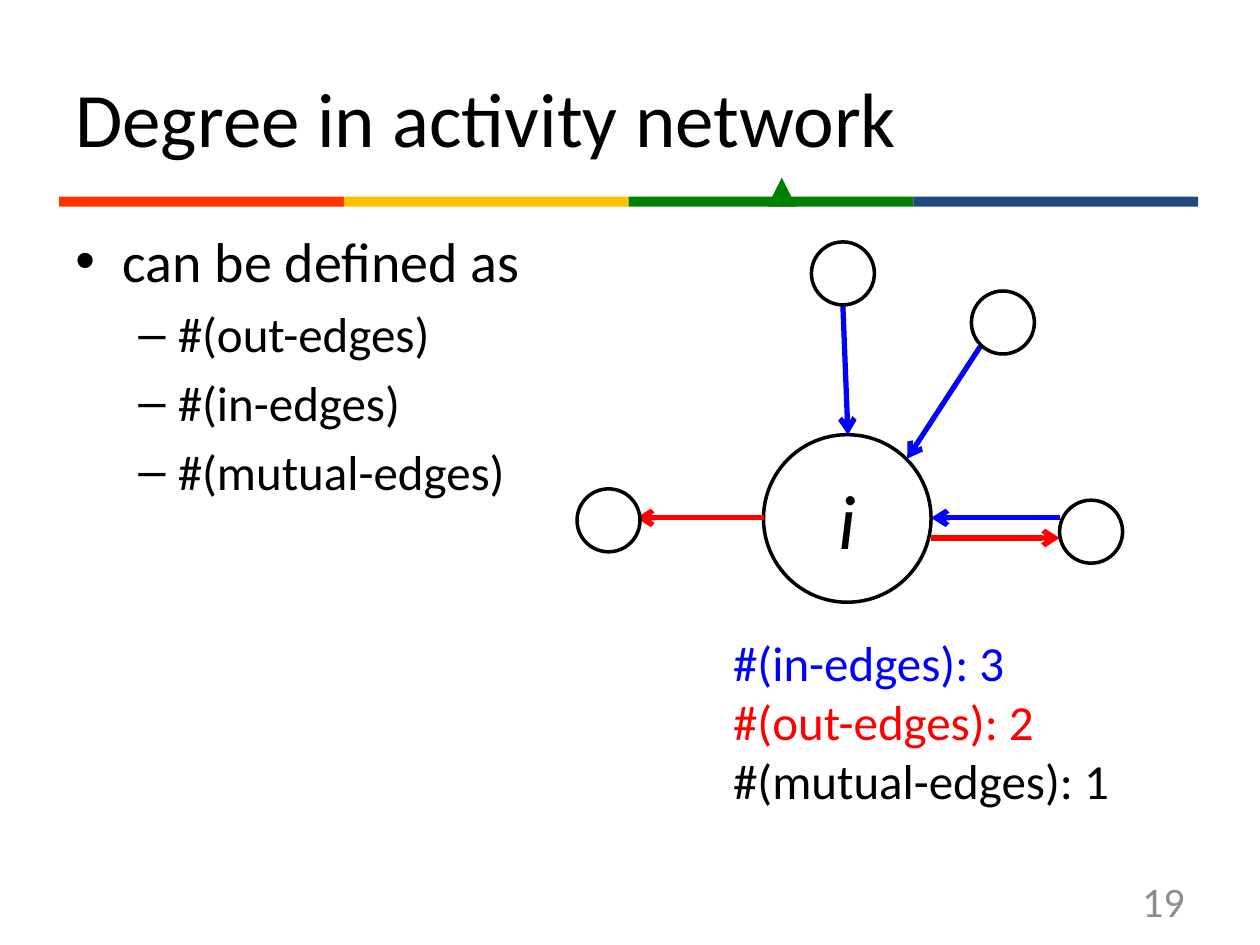
from pptx import Presentation
from pptx.dml.color import RGBColor
from pptx.enum.shapes import MSO_CONNECTOR, MSO_SHAPE as SHAPE
from pptx.enum.text import MSO_ANCHOR as ANCHOR, PP_ALIGN as ALIGN
from pptx.oxml.xmlchemy import OxmlElement
from pptx.util import Inches, Pt

prs = Presentation()
prs.slide_width, prs.slide_height = Inches(10), Inches(7.5)
s = prs.slides.add_slide(prs.slide_layouts[6])
COL = prs.slide_width / 100
BLACK, BLUE, RED, GREEN = "000000", "0000FF", "FF0000", "008000"


def write(tf, text, size=28, color=BLACK, italic=False, align=ALIGN.LEFT,
          anchor=ANCHOR.TOP, wrap=True, left=0, hang=0, before=0, bullet=None, level=0):
    tf.word_wrap, tf.vertical_anchor = wrap, anchor
    p = tf.add_paragraph() if tf.text else tf.paragraphs[0]
    p.alignment, p.level, p.space_before = align, level, Pt(before)
    pPr = p._p.get_or_add_pPr()
    pPr.set("marL", str(int(left * COL)))
    pPr.set("indent", str(int(-hang * COL)))
    if bullet:
        font = OxmlElement("a:buFont")
        font.set("typeface", "Arial")
        char = OxmlElement("a:buChar")
        char.set("char", bullet)
        pPr.extend([font, char])
    r = p.add_run()
    r.text = text
    r.font.name, r.font.size, r.font.italic = "Calibri", Pt(size), italic
    r.font.color.rgb = RGBColor.from_string(color)


def draw(kind, x, y, w, h, fill, line=None):
    sp = s.shapes.add_shape(kind, *(int(v * COL) for v in (x, y, w, h)))
    sp.shadow.inherit = False
    sp.fill.solid()
    sp.fill.fore_color.rgb = RGBColor.from_string(fill)
    if line:
        sp.line.color.rgb = RGBColor.from_string(line)
        sp.line.width = Pt(2)
    else:
        sp.line.fill.background()
    return sp


title, body, number, counts = [
    s.shapes.add_textbox(*(int(v * COL) for v in box)).text_frame
    for box in [(5, 3, 90, 12.5), (5, 17.5, 90, 49.5), (71.7, 69.5, 23.3, 4), (52.2, 49.7, 37.2, 15.1)]]

write(title, "Degree in activity network", size=44, anchor=ANCHOR.MIDDLE)
write(body, "can be defined as", size=32, left=3.75, hang=3.75, before=6.4, bullet="•")
for edges in ["out", "in", "mutual"]:
    write(body, f"#({edges}-edges)", left=8.13, hang=3.13, before=5.6, bullet="–", level=1)
write(number, "19", size=24, color="8C8C8C", align=ALIGN.RIGHT, anchor=ANCHOR.MIDDLE)
for edges, count, color in [("in", 3, BLUE), ("out", 2, RED), ("mutual", 1, BLACK)]:
    write(counts, f"#({edges}-edges): {count}", color=color, wrap=False, left=5, level=1)

draw(SHAPE.FLOWCHART_EXTRACT, 60.9, 14.1, 2.3, 2.3, GREEN)
for i, color in enumerate(["FF3300", "FFC000", GREEN, "1F497D"]):
    draw(SHAPE.RECTANGLE, 4.7 + i * 22.6, 15.6, 22.6, 0.8, color)

hub = draw(SHAPE.OVAL, 60.6, 34.5, 13.3, 13.3, "FFFFFF", BLACK)
write(hub.text_frame, "i", size=44, italic=True, align=ALIGN.CENTER, anchor=ANCHOR.MIDDLE, wrap=False)

for x1, y1, x2, y2, color in [
        (66.9, 24.3, 67.3, 34.5, BLUE),
        (77.8, 27.5, 72, 36.4, BLUE),
        (60.6, 41.1, 50.5, 41.1, RED),
        (84.1, 41.1, 73.9, 41.1, BLUE),
        (73.9, 42.7, 84.1, 42.7, RED)]:
    edge = s.shapes.add_connector(MSO_CONNECTOR.STRAIGHT, *(int(v * COL) for v in (x1, y1, x2, y2)))
    edge.line.color.rgb = RGBColor.from_string(color)
    edge.line.width = Pt(3)
    tail = OxmlElement("a:tailEnd")
    tail.set("type", "arrow")
    edge.line._get_or_add_ln().append(tail)
    edge._element.spPr.append(OxmlElement("a:effectLst"))

for x, y in [(64.4, 19.2), (45.8, 38.8), (77.1, 23.1), (84.1, 39.7)]:
    draw(SHAPE.OVAL, x, y, 5, 5, "FFFFFF", BLACK)

prs.save("out.pptx")
